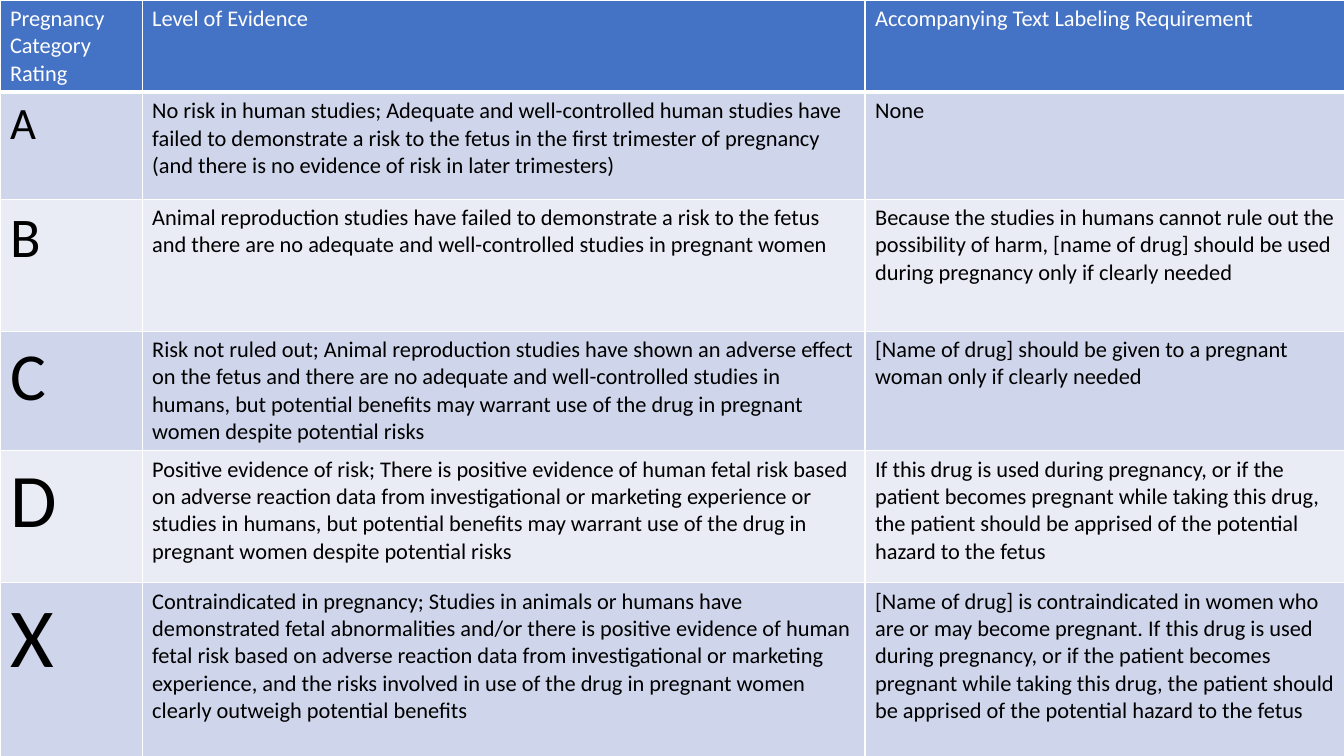
"""Build a slide with a table of drug pregnancy categories."""
from dataclasses import dataclass

from lxml.etree import SubElement
from pptx import Presentation
from pptx.dml.color import RGBColor
from pptx.oxml.ns import qn
from pptx.util import Inches, Pt


@dataclass(frozen=True)
class Theme:
    font: str = "Calibri"
    header_fill: str = "4472C4"
    band_fills: tuple = ("CFD5EA", "E9EBF5")
    header_text: str = "FFFFFF"
    body_text: str = "000000"
    border: str = "FFFFFF"
    text_size: int = 16
    rating_sizes: tuple = (32, 40, 48, 54, 60)


theme = Theme()


def fill_cell(cell, paragraphs, size, text_color, fill_color):
    cell.fill.solid()
    cell.fill.fore_color.rgb = RGBColor.from_string(fill_color)
    frame = cell.text_frame
    for index, text in enumerate(paragraphs):
        paragraph = frame.add_paragraph() if index else frame.paragraphs[0]
        run = paragraph.add_run()
        run.text = text
        run.font.name = theme.font
        run.font.size = Pt(size)
        run.font.bold = False
        run.font.color.rgb = RGBColor.from_string(text_color)


def add_borders(cell, top_width, bottom_width):
    properties = cell._tc.get_or_add_tcPr()
    widths = {"a:lnL": 1, "a:lnR": 1, "a:lnT": top_width, "a:lnB": bottom_width}
    for position, (side, width) in enumerate(widths.items()):
        line = SubElement(properties, qn(side), w=str(Pt(width)))
        SubElement(SubElement(line, qn("a:solidFill")), qn("a:srgbClr"), val=theme.border)
        properties.insert(position, line)


headings = (
    ["Pregnancy", "Category Rating"],
    ["Level of Evidence"],
    ["Accompanying Text Labeling Requirement"],
)
categories = (
    (
        ["A"],
        ["No risk in human studies; Adequate and well-controlled human studies have failed to "
         "demonstrate a risk to the fetus in the first trimester of pregnancy (and there is no "
         "evidence of risk in later trimesters)"],
        ["None"],
    ),
    (
        ["B"],
        ["Animal reproduction studies have failed to demonstrate a risk to the fetus and there "
         "are no adequate and well-controlled studies in pregnant women"],
        ["Because the studies in humans cannot rule out the possibility of harm, [name of drug] "
         "should be used during pregnancy only if clearly needed"],
    ),
    (
        ["C"],
        ["Risk not ruled out; Animal reproduction studies have shown an adverse effect on the "
         "fetus and there are no adequate and well-controlled studies in humans, but potential "
         "benefits may warrant use of the drug in pregnant women despite potential risks"],
        ["[Name of drug] should be given to a pregnant", "woman only if clearly needed"],
    ),
    (
        ["D"],
        ["Positive evidence of risk; There is positive evidence of human fetal risk based on "
         "adverse reaction data from investigational or marketing experience or studies in "
         "humans, but potential benefits may warrant use of the drug in pregnant women despite "
         "potential risks"],
        ["If this drug is used during pregnancy, or if the patient becomes pregnant while taking "
         "this drug, the patient should be apprised of the potential hazard to the fetus"],
    ),
    (
        ["X"],
        ["Contraindicated in pregnancy; Studies in animals or humans have demonstrated fetal "
         "abnormalities and/or there is positive evidence of human fetal risk based on adverse "
         "reaction data from investigational or marketing experience, and the risks involved in "
         "use of the drug in pregnant women clearly outweigh potential benefits"],
        ["[Name of drug] is contraindicated in women who are or may become pregnant. If this "
         "drug is used during pregnancy, or if the patient becomes pregnant while taking this "
         "drug, the patient should be apprised of the potential hazard to the fetus"],
    ),
)
column_widths = (1.41, 7.17, 4.76)
row_heights = (0.88, 1.06, 1.31, 1.14, 1.31, 1.8)

presentation = Presentation()
presentation.slide_width = Inches(13.33)
presentation.slide_height = Inches(7.5)
slide = presentation.slides.add_slide(presentation.slide_layouts[6])

ratings = slide.shapes.add_table(
    len(row_heights), len(column_widths), Inches(0), Inches(0),
    Inches(sum(column_widths)), Inches(sum(row_heights)),
).table
for column, width in zip(ratings.columns, column_widths):
    column.width = Inches(width)
for row, height in zip(ratings.rows, row_heights):
    row.height = Inches(height)

for column, heading in enumerate(headings):
    cell = ratings.cell(0, column)
    fill_cell(cell, heading, theme.text_size, theme.header_text, theme.header_fill)
    add_borders(cell, 1, 3)

for row, (category, rating_size) in enumerate(zip(categories, theme.rating_sizes), start=1):
    band_fill = theme.band_fills[(row - 1) % 2]
    for column, paragraphs in enumerate(category):
        cell = ratings.cell(row, column)
        size = theme.text_size if column else rating_size
        fill_cell(cell, paragraphs, size, theme.body_text, band_fill)
        add_borders(cell, 3 if row == 1 else 1, 1)

presentation.save("out.pptx")
